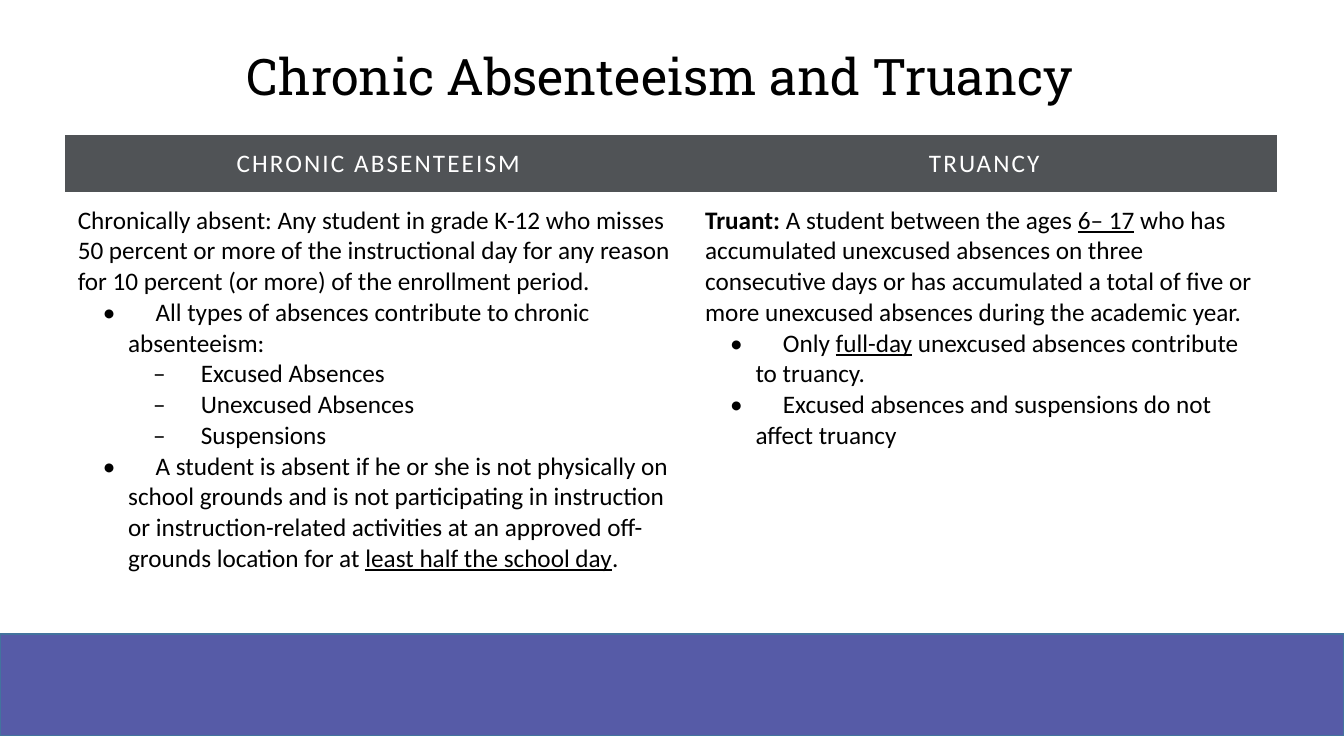
from lxml import etree
from pptx import Presentation
from pptx.dml.color import RGBColor
from pptx.enum import shapes, text
from pptx.oxml.ns import qn
from pptx.util import Cm, Pt

WHITE = RGBColor(0xFF, 0xFF, 0xFF)
BLACK = RGBColor(0, 0, 0)
SLATE = RGBColor(0x50, 0x53, 0x56)
VIOLET = RGBColor(0x56, 0x5B, 0xA7)
TEAL = RGBColor(0x43, 0x73, 0x9E)

PLAIN = "{2D5ABB26-0587-4C30-8999-92F81FD0307C}"  # table style without lines
STEP, HANG = Cm(1.27), Cm(0.64)
MARKS = {1: ("•", Cm(0.69)), 2: ("–", Cm(0.56))}  # mark and first-line gap

HEAD = {"name": "Calibri", "size": Pt(18)}
BOLD, UNDER = {"bold": True}, {"underline": True}

# Each column: heading, then paragraphs as (level, runs)
COLUMNS = [
    ("CHRONIC ABSENTEEISM", [
        (0, [("Chronically absent: Any student in grade K-12 who misses 50 percent "
              "or more of the instructional day for any reason for 10 percent "
              "(or more) of the enrollment period.", {})]),
        (1, [("All types of absences contribute to chronic absenteeism:", {})]),
        (2, [("Excused Absences", {})]),
        (2, [("Unexcused Absences", {})]),
        (2, [("Suspensions", {})]),
        (1, [("A student is absent if he or she is not physically on school grounds "
              "and is not participating in instruction or instruction-related "
              "activities at an approved off-grounds location for at ", {}),
             ("least half the school day", UNDER), (".", {})]),
    ]),
    ("TRUANCY", [
        (0, [("Truant: ", BOLD), ("A student between the ages ", {}),
             ("6– 17", UNDER),
             (" who has accumulated unexcused absences on three consecutive days "
              "or has accumulated a total of five or more unexcused absences "
              "during the academic year.", {})]),
        (1, [("Only ", {}), ("full-day", UNDER),
             (" unexcused absences contribute to truancy.", {})]),
        (1, [("Excused absences and suspensions do not affect truancy", {})]),
    ]),
]


def style(item, **values):
    for key, value in values.items():
        setattr(item, key, value)


def add_run(para, words, color, **values):
    run = para.add_run()
    run.text = words
    style(run.font, **values)
    run.font.color.rgb = color
    return run


def set_mark(para, level):
    """Hang a bullet and let a tab set the start of the first line."""
    mark, gap = MARKS[level]
    left = STEP * level
    props = para._p.get_or_add_pPr()
    props.set("marL", str(left))
    props.set("indent", str(-HANG))
    etree.SubElement(props, qn("a:buFont")).set("typeface", "Calibri")
    etree.SubElement(props, qn("a:buChar")).set("char", mark)
    tabs = etree.SubElement(props, qn("a:tabLst"))
    for pos in (gap, left + gap):  # from the indent, or from the cell edge
        tab = etree.SubElement(tabs, qn("a:tab"))
        tab.set("pos", str(pos))
        tab.set("algn", "l")


def add_band(slide, box):
    band = slide.shapes.add_shape(shapes.MSO_SHAPE.RECTANGLE, *box)
    band.shadow.inherit = False
    band.fill.solid()
    band.fill.fore_color.rgb = VIOLET
    band.line.color.rgb = TEAL
    band.line.width = Pt(1)


def add_title(slide, box):
    title = slide.shapes.title
    style(title, **dict(zip(("left", "top", "width", "height"), box)))
    style(title.text_frame, vertical_anchor=text.MSO_ANCHOR.BOTTOM,
          word_wrap=True, auto_size=text.MSO_AUTO_SIZE.NONE)
    para = title.text_frame.paragraphs[0]
    style(para, alignment=text.PP_ALIGN.LEFT, line_spacing=0.9)
    add_run(para, "Chronic Absenteeism and Truancy", BLACK,
            name="Roboto Slab", size=Pt(36))


def fill_head(cell, words):
    cell.fill.solid()
    cell.fill.fore_color.rgb = SLATE
    para = cell.text_frame.paragraphs[0]
    para.alignment = text.PP_ALIGN.CENTER
    run = add_run(para, words, WHITE, bold=False, **HEAD)
    run.font._element.set("spc", "150")


def fill_body(cell, paras):
    cell.fill.background()
    frame = cell.text_frame
    for num, (level, runs) in enumerate(paras):
        para = frame.add_paragraph() if num else frame.paragraphs[0]
        if level:
            set_mark(para, level)
        for pos, (words, form) in enumerate(runs):
            lead = "\t" if level and pos == 0 else ""
            add_run(para, lead + words, BLACK, **HEAD, **form)


def add_grid(slide, box, widths, heights):
    frame = slide.shapes.add_table(len(heights), len(widths), *box)
    grid = frame.table
    grid.horz_banding = False
    grid._tbl.tblPr.find(qn("a:tableStyleId")).text = PLAIN
    for col, width in zip(grid.columns, widths):
        col.width = width
    for row, height in zip(grid.rows, heights):
        row.height = height
    for cell in grid.iter_cells():
        style(cell, **{"margin_" + side: Cm(0.33)
                       for side in ("left", "top", "right", "bottom")})
    for num, (head, paras) in enumerate(COLUMNS):
        fill_head(grid.cell(0, num), head)
        fill_body(grid.cell(1, num), paras)


def main():
    deck = Presentation()
    style(deck, slide_width=Cm(33.87), slide_height=Cm(19.05))
    slide = deck.slides.add_slide(deck.slide_layouts[5])
    # Footer band, title, comparison table
    add_band(slide, (0, Cm(15.98), deck.slide_width, Cm(2.56)))
    add_title(slide, (Cm(5.97), Cm(0.81), Cm(21.69), Cm(2.01)))
    widths, heights = (Cm(15.81), Cm(14.73)), (Cm(1.44), Cm(11.94))
    add_grid(slide, (Cm(1.63), Cm(3.4), sum(widths), sum(heights)),
             widths, heights)
    deck.save("out.pptx")


if __name__ == "__main__":
    main()
